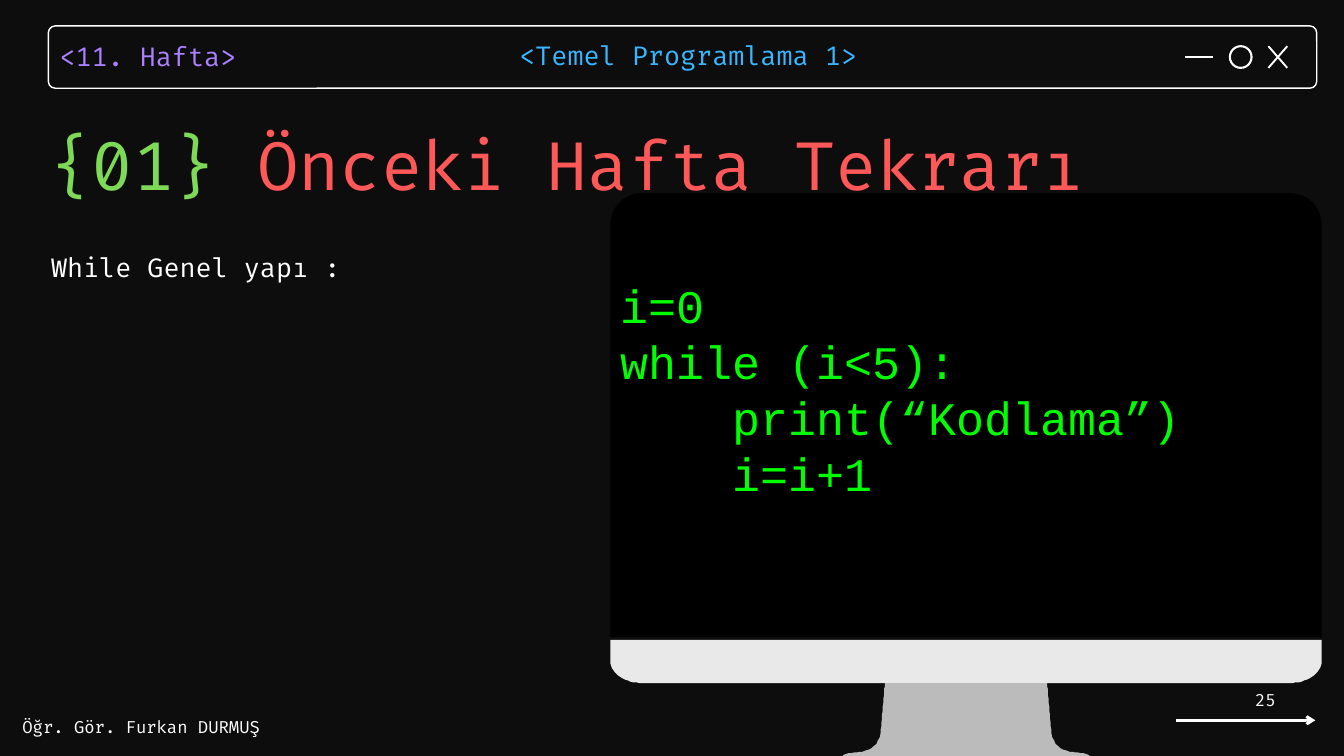
from lxml import etree
from pptx import Presentation
from pptx import util as u
from pptx.dml.color import RGBColor
from pptx.enum import shapes as sh, text as tx
from pptx.oxml.ns import qn

PX = 9525
BACK = RGBColor(0x0D, 0x0D, 0x0D)
WHITE = RGBColor(0xFF, 0xFF, 0xFF)
BLACK = RGBColor(0, 0, 0)
PURPLE = RGBColor(0xAB, 0x81, 0xFF)
BLUE = RGBColor(0x38, 0xB6, 0xFF)
GREEN = RGBColor(0x7E, 0xD9, 0x57)
RED = RGBColor(0xFF, 0x58, 0x58)
LIME = RGBColor(0, 0xFF, 0)
PALE = RGBColor(0xE9, 0xE9, 0xE9)
GREY = RGBColor(0xBB, 0xBB, 0xBB)

FIRA = "Fira Code"
MONO = "Courier New"
FIT = dict(margin_left=0, margin_top=0, margin_right=0, margin_bottom=0,
           auto_size=tx.MSO_AUTO_SIZE.SHAPE_TO_FIT_TEXT)
MID = dict(vertical_anchor=tx.MSO_ANCHOR.MIDDLE)


def put(obj, form):
    for key, val in form.items():
        setattr(obj, key, val)


def emu(*vals):
    return [u.Emu(v * PX) for v in vals]


def write(tree, box, lines, size, font=FIRA, frame=FIT, para={}):
    body = tree.add_textbox(*emu(*box)).text_frame
    put(body, dict(frame, word_wrap=True))
    for n, line in enumerate(lines):
        par = body.paragraphs[0] if n == 0 else body.add_paragraph()
        put(par, para)
        for words, color in line:
            run = par.add_run()
            run.text = words
            put(run.font, dict(name=font, size=u.Pt(size)))
            run.font.color.rgb = color


def paint(shape, fill=None, line=None, width=0):
    shape.shadow.inherit = False
    if fill is None:
        shape.fill.background()
    else:
        shape.fill.solid()
        shape.fill.fore_color.rgb = fill
    if line is None:
        shape.line.fill.background()
    else:
        shape.line.color.rgb = line
        shape.line.width = u.Pt(width)


def block(tree, kind, box, round_by=None, **look):
    shape = tree.add_shape(kind, *emu(*box))
    if round_by is not None:
        shape.adjustments[0] = round_by
    paint(shape, **look)


def rule(tree, ends, width, arrow=False):
    line = tree.add_connector(sh.MSO_CONNECTOR.STRAIGHT, *emu(*ends))
    line.line.color.rgb = WHITE
    line.line.width = u.Pt(width)
    if arrow:
        etree.SubElement(line.line._get_or_add_ln(), qn("a:tailEnd"), type="arrow")
    etree.SubElement(line._element.spPr, qn("a:effectLst"))


def curve(a, b, c, d, steps=16):
    for n in range(1, steps + 1):
        t = n / steps
        s = 1 - t
        yield tuple(s**3 * p + 3 * s * s * t * q + 3 * s * t * t * r + t**3 * e
                    for p, q, r, e in zip(a, b, c, d))


def mirror(tree, left, top, wide, half, fill):
    pts = half + [(wide - x, y) for x, y in reversed(half)]
    pts = [(left + x, top + y) for x, y in pts]
    pen = tree.build_freeform(*pts[0], scale=PX)
    pen.add_line_segments(pts[1:], close=True)
    paint(pen.convert_to_shape(), fill)


def header(slide, left, top, wide, high):
    tree = slide.shapes.add_group_shape().shapes
    block(tree, sh.MSO_SHAPE.ROUNDED_RECTANGLE, (left, top, wide, high), 0.11,
          line=WHITE, width=1.5)
    for x1, y1, x2, y2 in ((1743, 29, 1770, 60), (1770, 29, 1743, 60),
                           (1624, 45, 1664, 45)):
        rule(tree, (left + x1, top + y1, left + x2, top + y2), 2)
    block(tree, sh.MSO_SHAPE.OVAL, (left + 1688, top + 29, 31, 31),
          line=WHITE, width=2.25)
    for x, y, w, words, color in ((16, 13, 326, "<11. Hafta>", PURPLE),
                                  (673, 12, 508, "<Temel Programlama 1>", BLUE)):
        write(tree, (left + x, top + y, w, 51), [[(words, color)]], 28,
              para=dict(line_spacing=u.Pt(39.2)))


def monitor(slide, left, top, wide, high):
    tree = slide.shapes.add_group_shape().shapes
    block(tree, sh.MSO_SHAPE.ROUND_2_SAME_RECTANGLE, (left, top, wide, 634), 0.07,
          fill=BLACK)
    chin = [(0, 638), (0, 669), *curve((0, 669), (0, 686), (21, 700), (47, 700))]
    stand = [(392, 700),
             *curve((392, 700), (392, 700), (388, 750), (386, 771)),
             *curve((386, 771), (380, 807), (342, 795), (332, 803)),
             (332, high)]
    mirror(tree, left, top, wide, chin, PALE)
    mirror(tree, left, top, wide, stand, GREY)
    block(tree, sh.MSO_SHAPE.RECTANGLE, (left + 44, top + 35, 934, 586),
          fill=BLACK, line=BLACK, width=2)
    code = ("i=0", "while (i<5):", "    print(“Kodlama”)", "    i=i+1")
    write(tree, (left + 14, top + 120, 960, 324), [[(row, LIME)] for row in code],
          50, MONO)


def footer(slide, left, top, wide, high):
    tree = slide.shapes
    write(tree, (left, top + 44, 352, 29), [[("Öğr. Gör. Furkan DURMUŞ", WHITE)]], 18)
    write(tree, (left + wide - 271, top, 224, 38), [[("25", WHITE)]], 18,
          frame=MID, para=dict(alignment=tx.PP_ALIGN.RIGHT))
    rule(tree, (left + wide - 199, top + 49, left + wide, top + 49), 3, True)


def title(slide, left, top, wide, high):
    write(slide.shapes, (left, top, wide, high),
          [[("{01} ", GREEN), ("Önceki Hafta Tekrarı", RED)]], 72,
          para=dict(line_spacing=u.Pt(102.6)))


def intro(slide, left, top, wide, high):
    write(slide.shapes, (left, top, wide, high), [[("While Genel yapı :", WHITE)]], 28,
          para=dict(alignment=tx.PP_ALIGN.JUSTIFY))


def main():
    deck = Presentation()
    deck.slide_width, deck.slide_height = emu(1920, 1080)
    slide = deck.slides.add_slide(deck.slide_layouts[6])
    slide.background.fill.solid()
    slide.background.fill.fore_color.rgb = BACK
    header(slide, 69, 37, 1812, 89)
    footer(slide, 32, 980, 1847, 73)
    intro(slide, 73, 359, 672, 45)
    title(slide, 72, 155, 1848, 132)
    monitor(slide, 872, 276, 1016, 804)
    deck.save("out.pptx")


if __name__ == "__main__":
    main()
